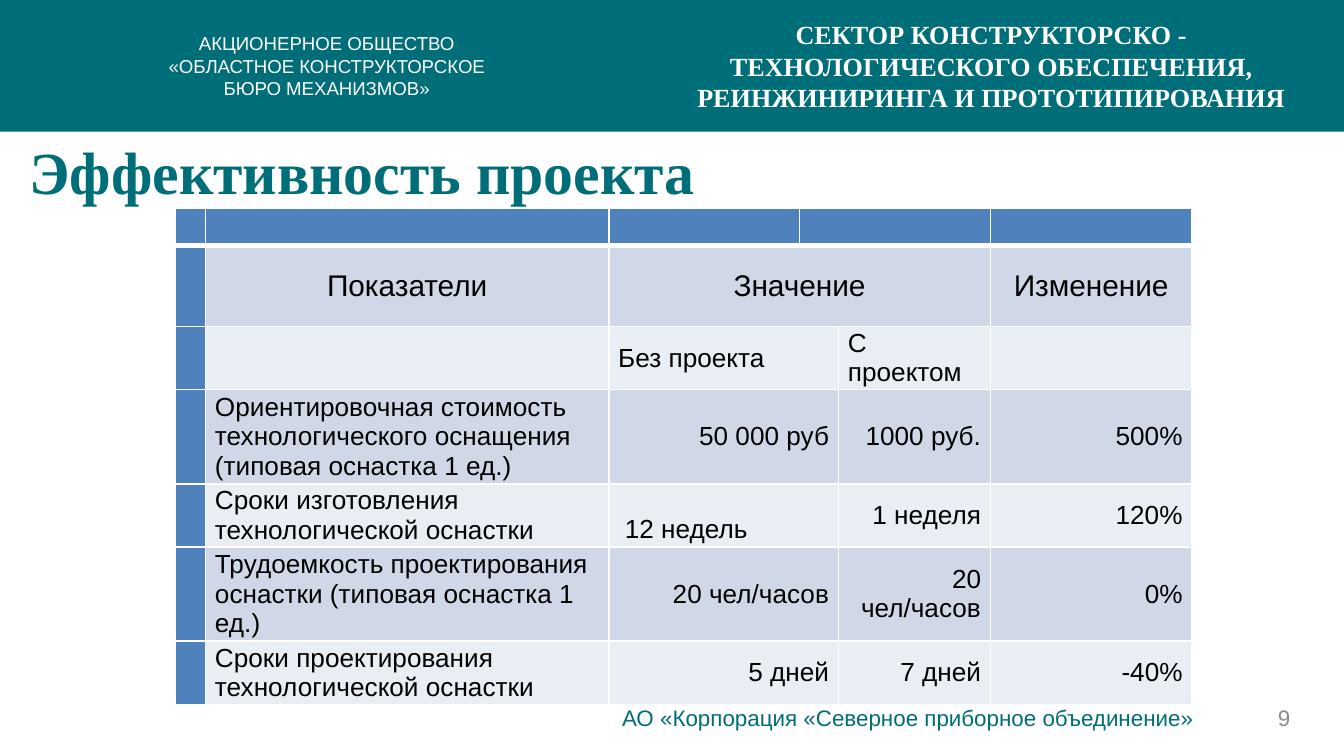
import pptx
import pptx.util
import pptx.dml.color
import pptx.enum.shapes
import pptx.enum.text
import pptx.oxml
import pptx.oxml.ns
from dataclasses import dataclass

Inches = pptx.util.Inches
Align = pptx.enum.text.PP_ALIGN
Anchor = pptx.enum.text.MSO_ANCHOR


@dataclass(frozen=True)
class Theme:
    teal: str = "006E78"
    white: str = "FFFFFF"
    black: str = "000000"
    grey: str = "8C8C8C"
    blue: str = "4F81BD"
    bands: tuple = ("D0D8E8", "E9EDF4")
    sans: str = "Arial"
    serif: str = "Times New Roman"
    small: int = 10
    footer: int = 12
    body: int = 14
    heading: int = 16
    title: int = 32


def rgb(color):
    return pptx.dml.color.RGBColor.from_string(color)


class SlideBuilder:
    def __init__(self, slide, theme):
        self.slide = slide
        self.theme = theme

    def style(self, para, size, color, font, bold=False, align=Align.LEFT):
        para.alignment = align
        para.font.size = pptx.util.Pt(size)
        para.font.name = font
        para.font.bold = bold
        para.font.color.rgb = rgb(color)

    def band(self, left, top, width, height, color):
        shape = self.slide.shapes.add_shape(
            pptx.enum.shapes.MSO_SHAPE.RECTANGLE,
            Inches(left), Inches(top), Inches(width), Inches(height))
        shape.shadow.inherit = False
        shape.fill.solid()
        shape.fill.fore_color.rgb = rgb(color)
        shape.line.fill.background()

    def text(self, place, lines, size, color, font, bold=False,
             align=Align.LEFT, anchor=Anchor.TOP, wrap=True):
        box = self.slide.shapes.add_textbox(*map(Inches, place))
        frame = box.text_frame
        frame.word_wrap = wrap
        frame.vertical_anchor = anchor
        frame.text = "\n".join(lines)
        for para in frame.paragraphs:
            self.style(para, size, color, font, bold, align)

    def border(self, cell, side, width):
        line = pptx.oxml.parse_xml(
            f'<a:{side} {pptx.oxml.ns.nsdecls("a")} w="{pptx.util.Pt(width)}">'
            f'<a:solidFill><a:srgbClr val="{self.theme.white}"/></a:solidFill>'
            f'</a:{side}>')
        cell._tc.get_or_add_tcPr().append(line)

    def cell(self, cell, text, fill, size, align, bottom_width):
        for side in ("lnL", "lnR", "lnT"):
            self.border(cell, side, 1)
        self.border(cell, "lnB", bottom_width)
        cell.fill.solid()
        cell.fill.fore_color.rgb = rgb(fill)
        cell.margin_left = cell.margin_right = Inches(0.07)
        cell.margin_top = cell.margin_bottom = 0
        cell.vertical_anchor = Anchor.MIDDLE
        cell.text = text
        self.style(cell.text_frame.paragraphs[0], size, self.theme.black,
                   self.theme.sans, align=align)

    def table(self, left, top, widths, heights, rows, spans):
        table = self.slide.shapes.add_table(
            len(rows), len(widths), Inches(left), Inches(top),
            Inches(sum(widths)), Inches(sum(heights))).table
        for column, width in zip(table.columns, widths):
            column.width = Inches(width)
        for row, height in zip(table.rows, heights):
            row.height = Inches(height)
        for r, texts in enumerate(rows):
            for c, text in enumerate(texts):
                header = r == 0 or c == 0
                fill = self.theme.blue if header else self.theme.bands[(r - 1) % 2]
                size = self.theme.heading if r == 1 else self.theme.body
                align = (Align.CENTER if r == 1 else
                         Align.RIGHT if r > 2 and c > 1 else Align.LEFT)
                self.cell(table.cell(r, c), text, fill, size, align,
                          3 if r == 0 else 1)
            first, last = spans[r]
            table.cell(r, first).merge(table.cell(r, last))
        return table


def main():
    theme = Theme()
    deck = pptx.Presentation()
    deck.slide_width = Inches(10)
    deck.slide_height = Inches(10) * 9 // 16
    page = SlideBuilder(deck.slides.add_slide(deck.slide_layouts[6]), theme)

    page.band(0, 0, 10, 0.98, theme.teal)
    page.text((1.04, 0.19, 2.78, 0.61),
              ["АКЦИОНЕРНОЕ ОБЩЕСТВО",
               "«ОБЛАСТНОЕ КОНСТРУКТОРСКОЕ БЮРО МЕХАНИЗМОВ»"],
              theme.small, theme.white, theme.sans, align=Align.CENTER)
    page.text((4.53, 5.19, 4.49, 0.3),
              ["АО «Корпорация «Северное приборное объединение»"],
              theme.footer, theme.teal, theme.sans)
    page.text((9.41, 5.19, 0.47, 0.3), ["9"], theme.footer, theme.grey,
              theme.sans, anchor=Anchor.MIDDLE)
    page.text((0.12, 0.95, 5.21, 0.64), ["Эффективность проекта"],
              theme.title, theme.teal, theme.serif, bold=True,
              anchor=Anchor.MIDDLE, wrap=False)
    page.text((5, 0.34, 4.75, 0.3),
              ["СЕКТОР КОНСТРУКТОРСКО - ТЕХНОЛОГИЧЕСКОГО ОБЕСПЕЧЕНИЯ, "
               "РЕИНЖИНИРИНГА И ПРОТОТИПИРОВАНИЯ"],
              theme.body, theme.white, theme.serif, bold=True,
              align=Align.CENTER, anchor=Anchor.MIDDLE)

    rows = [
        ("", "", "", "", "", ""),
        ("", "Показатели", "Значение", "", "", "Изменение"),
        ("", "", "Без проекта", "", "С проектом", ""),
        ("", "Ориентировочная стоимость технологического оснащения "
         "(типовая оснастка 1 ед.)", "50 000 руб", "", "1000 руб.", "500%"),
        ("", "Сроки изготовления технологической оснастки",
         "12 недель", "", "1 неделя", "120%"),
        ("", "Трудоемкость проектирования оснастки (типовая оснастка 1 ед.)",
         "20 чел/часов", "", "20 чел/часов", "0%"),
        ("", "Сроки проектирования технологической оснастки",
         "5 дней", "", "7 дней", "-40%"),
    ]
    table = page.table(1.3, 1.55, (0.23, 3, 1.42, 0.29, 1.13, 1.5),
                       (0.28, 0.6, 0.47, 0.7, 0.47, 0.7, 0.47), rows,
                       [(3, 4), (2, 4)] + [(2, 3)] * 5)
    weeks = table.cell(4, 2)
    weeks.vertical_anchor = Anchor.BOTTOM
    weeks.margin_left = Inches(0.12)
    weeks.margin_bottom = Inches(0.02)
    weeks.text_frame.paragraphs[0].alignment = Align.LEFT

    deck.save("out.pptx")


if __name__ == "__main__":
    main()
